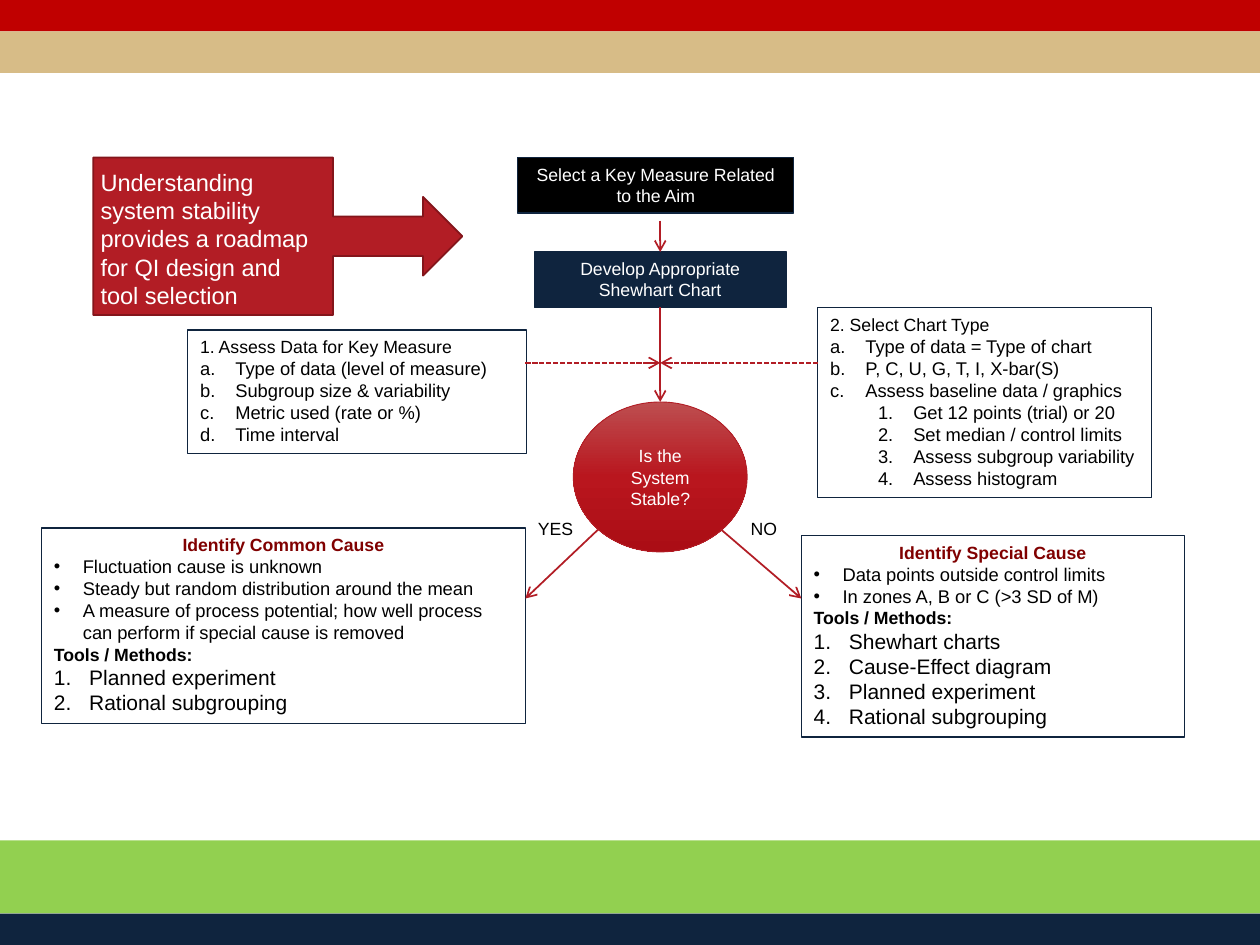
"""Build the system stability roadmap slide."""
from copy import deepcopy

from lxml.etree import SubElement
from pptx import Presentation
from pptx.dml.color import RGBColor
from pptx.enum.dml import MSO_LINE
from pptx.enum.shapes import MSO_CONNECTOR, MSO_SHAPE
from pptx.enum.text import MSO_ANCHOR, PP_ALIGN
from pptx.oxml.ns import qn
from pptx.util import Inches, Pt

NAVY = RGBColor(0x0F, 0x24, 0x3E)
GREEN = RGBColor(0x92, 0xD0, 0x50)
SCARLET = RGBColor(0xC0, 0x00, 0x00)
TAN = RGBColor(0xD7, 0xBC, 0x87)
RED = RGBColor(0xB2, 0x1D, 0x25)
DARK_RED = RGBColor(0x84, 0x15, 0x1B)
MAROON = RGBColor(0x80, 0x00, 0x00)
BLACK = RGBColor(0x00, 0x00, 0x00)
WHITE = RGBColor(0xFF, 0xFF, 0xFF)
OVAL_STOPS = [
    (0, RGBColor(0xBD, 0x4E, 0x50)),
    (0.5, RGBColor(0xB9, 0x16, 0x1E)),
    (1, RGBColor(0xAB, 0x0D, 0x15)),
]

FONT = "Arial"
SMALL, ITEM, TOOL, LARGE = 10.1, 10.5, 12, 13.5
AXIS = 5.24
BRANCH_TOP, BRANCH_END = 4.2, 4.75
SIDE_INPUT = 2.88

BANDS = [(0, 0.25, SCARLET), (0.25, 0.33, TAN), (6.67, 0.58, GREEN), (7.25, 0.25, NAVY)]

STYLES = {
    "plain": {},
    "cause": {"bold": True, "color": MAROON, "align": PP_ALIGN.CENTER},
    "heading": {"bold": True},
    "bullet": {"size": ITEM, "bullet": "•", "margin": 0.23, "hanging": 0.23},
    "letter": {"size": ITEM, "number": "alphaLcPeriod", "margin": 0.28, "hanging": 0.28},
    "step": {"size": ITEM, "number": "arabicPeriod", "margin": 0.66, "hanging": 0.28, "level": 1},
    "tool": {"size": TOOL, "number": "arabicPeriod", "margin": 0.28, "hanging": 0.28},
}

PANELS = [
    ((6.49, 2.44, 2.65, 1.51), [
        ("plain", ["2. Select Chart Type"]),
        ("letter", ["Type of data = Type of chart", "P, C, U, G, T, I, X-bar(S)",
                    "Assess baseline data / graphics"]),
        ("step", ["Get 12 points (trial) or 20", "Set median / control limits",
                  "Assess subgroup variability", "Assess histogram"]),
    ]),
    ((1.49, 2.62, 2.69, 0.98), [
        ("plain", ["1. Assess Data for Key Measure"]),
        ("letter", ["Type of data (level of measure)", "Subgroup size & variability",
                    "Metric used (rate or %)", "Time interval"]),
    ]),
    ((0.33, 4.19, 3.84, 1.55), [
        ("cause", ["Identify Common Cause"]),
        ("bullet", ["Fluctuation cause is unknown",
                    "Steady but random distribution around the mean",
                    "A measure of process potential; how well process can perform "
                    "if special cause is removed"]),
        ("heading", ["Tools / Methods:"]),
        ("tool", ["Planned experiment", "Rational subgrouping"]),
    ]),
    ((6.36, 4.25, 3.04, 1.6), [
        ("cause", ["Identify Special Cause"]),
        ("bullet", ["Data points outside control limits", "In zones A, B or C (>3 SD of M)"]),
        ("heading", ["Tools / Methods:"]),
        ("tool", ["Shewhart charts", "Cause-Effect diagram", "Planned experiment",
                  "Rational subgrouping"]),
    ]),
]

ANSWERS = [("YES", (4.17, 4.06, 0.56, 0.27)), ("NO", (5.86, 4.06, 0.44, 0.27))]
MESSAGE = "Understanding system stability provides a roadmap for QI design and tool selection"


def write(shape, text, size=SMALL, color=BLACK, bold=False, align=PP_ALIGN.LEFT,
          bullet=None, number=None, margin=0, hanging=0, level=0):
    """Write one formatted paragraph into the first free place of a shape."""
    frame = shape.text_frame
    paragraph = frame.add_paragraph() if frame.text else frame.paragraphs[0]
    paragraph.alignment = align
    paragraph.level = level
    if bullet or number:
        properties = paragraph._p.get_or_add_pPr()
        properties.set("marL", str(Inches(margin)))
        properties.set("indent", str(-Inches(hanging)))
        SubElement(properties, qn("a:buFont"), typeface=FONT)
        if bullet:
            SubElement(properties, qn("a:buChar"), char=bullet)
        else:
            SubElement(properties, qn("a:buAutoNum"), type=number)
    run = paragraph.add_run()
    run.text = text
    run.font.name = FONT
    run.font.size = Pt(size)
    run.font.bold = bold
    run.font.color.rgb = color


def add_box(slide, place, fill=None, line=None, width=0.75, kind=MSO_SHAPE.RECTANGLE,
            anchor=MSO_ANCHOR.TOP):
    """Add a preset shape without shadow."""
    shape = slide.shapes.add_shape(kind, *map(Inches, place))
    shape.shadow.inherit = False
    if fill is None:
        shape.fill.background()
    else:
        shape.fill.solid()
        shape.fill.fore_color.rgb = fill
    if line is None:
        shape.line.fill.background()
    else:
        shape.line.color.rgb = line
        shape.line.width = Pt(width)
    shape.text_frame.word_wrap = True
    shape.text_frame.vertical_anchor = anchor
    return shape


def add_label(slide, place, text, wrap=False, **style):
    """Add a text box holding one paragraph."""
    label = slide.shapes.add_textbox(*map(Inches, place))
    label.text_frame.word_wrap = wrap
    write(label, text, **style)


def add_arrow(slide, start, end, dashed=False):
    """Add a red connector with an open arrowhead at its end."""
    arrow = slide.shapes.add_connector(MSO_CONNECTOR.STRAIGHT, *map(Inches, start + end))
    arrow.line.color.rgb = RED
    arrow.line.width = Pt(1)
    if dashed:
        arrow.line.dash_style = MSO_LINE.SQUARE_DOT
    SubElement(arrow.line._get_or_add_ln(), qn("a:tailEnd"), type="arrow")
    SubElement(arrow._element.spPr, qn("a:effectLst"))
    return arrow


def fill_gradient(shape, stops):
    """Fill a shape from top to bottom with the given colour stops."""
    shape.fill.gradient()
    shape.fill.gradient_angle = 270
    stop_list = shape._element.spPr.find(".//" + qn("a:gsLst"))
    while len(stop_list) < len(stops):
        stop_list.append(deepcopy(stop_list[0]))
    for stop, (position, color) in zip(shape.fill.gradient_stops, stops):
        stop.position = position
        stop.color.rgb = color


def main():
    """Compose and save the slide."""
    presentation = Presentation()
    presentation.slide_width, presentation.slide_height = Inches(10), Inches(7.5)
    slide = presentation.slides.add_slide(presentation.slide_layouts[6])

    for top, height, color in BANDS:
        add_box(slide, (0, top, 10, height), color)
    for text, place in ANSWERS:
        add_label(slide, place, text)

    measure = add_box(slide, (4.11, 1.25, 2.19, 0.44), BLACK, NAVY)
    write(measure, "Select a Key Measure Related to the Aim", color=WHITE, align=PP_ALIGN.CENTER)
    chart_step = add_box(slide, (AXIS - 1, 2, 2, 0.44), NAVY, NAVY)
    write(chart_step, "Develop Appropriate Shewhart Chart", color=WHITE, align=PP_ALIGN.CENTER)
    for place, groups in PANELS:
        panel = add_box(slide, place, line=NAVY)
        for style, lines in groups:
            for text in lines:
                write(panel, text, **STYLES[style])
    question = add_box(slide, (AXIS - 0.69, 3.19, 1.38, 1.19), RED, RED, 0.5,
                       MSO_SHAPE.OVAL, MSO_ANCHOR.MIDDLE)
    fill_gradient(question, OVAL_STOPS)
    write(question, "Is the System Stable?", color=WHITE, align=PP_ALIGN.CENTER)

    to_question = add_arrow(slide, (AXIS, 2.44), (AXIS, 3.19))
    to_question.begin_connect(chart_step, 2)
    to_question.end_connect(question, 0)
    add_arrow(slide, (AXIS, 1.75), (AXIS, 2)).end_connect(chart_step, 0)
    for start, end in [(5.72, 6.36), (4.75, 4.17)]:
        add_arrow(slide, (start, BRANCH_TOP), (end, BRANCH_END))
    for start in (4.17, 6.49):
        add_arrow(slide, (start, SIDE_INPUT), (AXIS, SIDE_INPUT), dashed=True)

    add_box(slide, (0.74, 1.25, 2.93, 1.25), RED, DARK_RED, 1, MSO_SHAPE.RIGHT_ARROW_CALLOUT)
    add_label(slide, (0.7, 1.28, 1.94, 1.24), MESSAGE, wrap=True, size=LARGE, color=WHITE)
    presentation.save("out.pptx")


if __name__ == "__main__":
    main()
